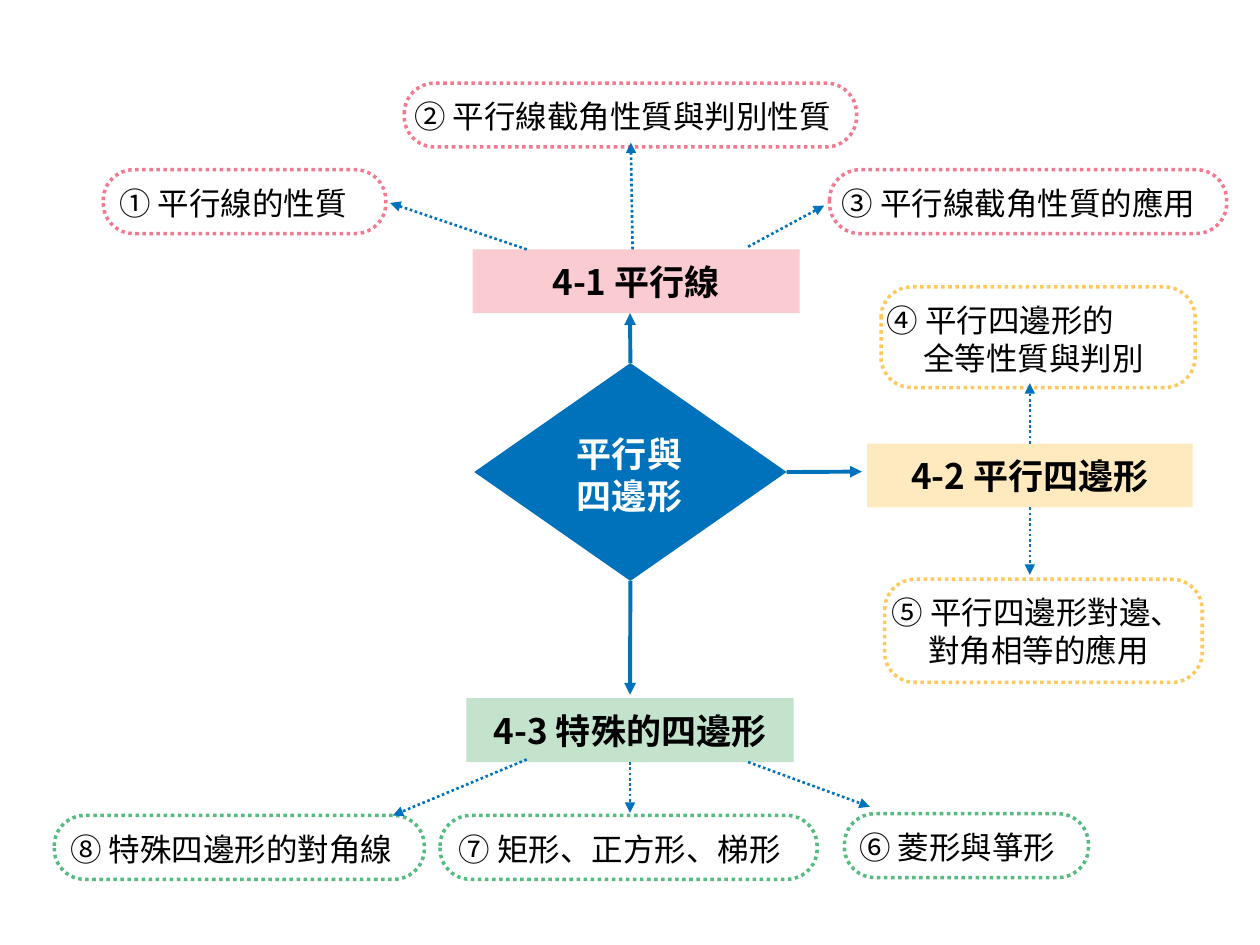
import pptx
import pptx.util
import pptx.dml.color
import pptx.enum.dml
import pptx.enum.shapes
import pptx.enum.text
import pptx.oxml
import pptx.oxml.ns

Pt = pptx.util.Pt
KIND = pptx.enum.shapes.MSO_SHAPE
ALIGN = pptx.enum.text.PP_ALIGN
CJK = "Noto Sans CJK SC"
BLUE, PINK, GOLD, GREEN = "0072BC", "F2798F", "FEC95B", "56BB80"
TOP, LEFT, BOTTOM, RIGHT = range(4)


def color(code):
    return pptx.dml.color.RGBColor.from_string(code)


def add_tag(node, name, **attrs):
    tag = pptx.oxml.parse_xml(f"<a:{name} {pptx.oxml.ns.nsdecls('a')}/>")
    for key, value in attrs.items():
        tag.set(key, value)
    node.append(tag)


def set_font(font, size, name=CJK, code="000000", bold=False):
    font.size, font.name, font.bold = Pt(size), name, bold
    font.color.rgb = color(code)
    add_tag(font._element, "ea", typeface=CJK)


def set_line(line, code, width, dotted):
    line.color.rgb = color(code)
    line.width = Pt(width)
    if dotted:
        line.dash_style = pptx.enum.dml.MSO_LINE.ROUND_DOT


def add_block(slide, kind, box, fill=None):
    shape = slide.shapes.add_shape(kind, *map(Pt, box))
    shape.shadow.inherit = False
    shape.line.fill.background()
    if fill:
        shape.fill.solid()
        shape.fill.fore_color.rgb = color(fill)
    else:
        shape.fill.background()
    return shape


def add_text(slide, box):
    frame = slide.shapes.add_textbox(*map(Pt, box)).text_frame
    frame.word_wrap = True
    frame.auto_size = pptx.enum.text.MSO_AUTO_SIZE.SHAPE_TO_FIT_TEXT
    return frame


def add_core(slide, box, text):
    x, y, w, h = box
    shape = add_block(slide, KIND.DIAMOND, box, BLUE)
    frame = add_text(slide, (x + 30, y + 36, w - 61, 55.5))
    frame.text = text
    for para in frame.paragraphs:
        para.alignment = ALIGN.CENTER
        set_font(para.font, 20, code="FFFFFF", bold=True)
    return shape


def add_topic(slide, box, text, fill):
    shape = add_block(slide, KIND.RECTANGLE, box, fill)
    frame = shape.text_frame
    frame.vertical_anchor = pptx.enum.text.MSO_ANCHOR.MIDDLE
    para = frame.paragraphs[0]
    para.text = text
    para.alignment = ALIGN.CENTER
    set_font(para.font, 20, bold=True)
    return shape


def add_card(slide, box, mark, lines, code, shift, width):
    x, y, w, h = box
    shape = add_block(slide, KIND.ROUNDED_RECTANGLE, box)
    shape.adjustments[0] = 17.4 / h
    set_line(shape.line, code, 2, True)
    tall = h > 40
    frame = add_text(slide, (x + shift, y + 4.5, width, 51 if tall else 29))
    for index, line in enumerate(lines):
        para = frame.paragraphs[0] if index == 0 else frame.add_paragraph()
        if tall:
            props = para._p.get_or_add_pPr()
            props.set("marL", str(Pt(21)))
            props.set("indent", str(Pt(0 if index else -21)))
        if index == 0:
            run = para.add_run()
            run.text = mark + " "
            set_font(run.font, 18, "Calibri")
        run = para.add_run()
        run.text = line
        set_font(run.font, 18)


def add_arrow(slide, start, end, dotted=True, source=None, side=None):
    kind = pptx.enum.shapes.MSO_CONNECTOR.STRAIGHT
    arrow = slide.shapes.add_connector(kind, *map(Pt, start + end))
    if source is not None:
        arrow.begin_connect(source, side)
    set_line(arrow.line, BLUE, 1.5 if dotted else 2.25, dotted)
    add_tag(arrow.line._get_or_add_ln(), "tailEnd", type="triangle")
    add_tag(arrow._element.spPr, "effectLst")


def main():
    deck = pptx.Presentation()
    deck.slide_width, deck.slide_height = Pt(720), Pt(540)
    slide = deck.slides.add_slide(deck.slide_layouts[6])

    core = add_core(slide, (271, 207.5, 178.5, 124.5), "平行與\n四邊形")
    quad = add_topic(slide, (495.5, 253.5, 186, 36.5), "4-2 平行四邊形", "FFEABF")
    special = add_topic(slide, (266.5, 399, 187, 36.5), "4-3 特殊的四邊形", "C3E3CC")
    add_topic(slide, (270, 142.5, 187, 36.5), "4-1 平行線", "FACCD2")

    cards = [
        ((59, 97, 161.5, 36.5), ["平行線的性質"], PINK, 2, 162),
        ((231, 47.5, 258.5, 36.5), ["平行線截角性質與判別性質"], PINK, -1.5, 262),
        ((474, 97, 227, 36.5), ["平行線截角性質的應用"], PINK, 0, 227),
        ((503.5, 164, 179.5, 57.5), ["平行四邊形的", "全等性質與判別"], GOLD, -4, 181.5),
        ((505.5, 331, 181.5, 59), ["平行四邊形對邊、對角相等的應用"], GOLD, -3, 193.5),
        ((482.5, 465, 139.5, 36.5), ["菱形與箏形"], GREEN, 1.5, 144),
        ((251.5, 466, 215.5, 36.5), ["矩形、正方形、梯形"], GREEN, 3.5, 219),
        ((31, 466, 211.5, 36.5), ["特殊四邊形的對角線"], GREEN, 2, 218),
    ]
    for mark, (box, lines, code, shift, width) in zip("①②③④⑤⑥⑦⑧", cards):
        add_card(slide, box, mark, lines, code, shift, width)

    add_arrow(slide, (360, 207.5), (360, 179), False, core, TOP)
    add_arrow(slide, (449.5, 269.5), (492.5, 269.5), False, core, RIGHT)
    add_arrow(slide, (360, 332), (360, 397), False, core, BOTTOM)
    add_arrow(slide, (360, 435.5), (360, 464.5), True, special, BOTTOM)
    add_arrow(slide, (588.5, 253.5), (588.5, 219), True, quad, TOP)
    add_arrow(slide, (588.5, 290), (588.5, 328.5), True, quad, BOTTOM)
    for start, end in [
        ((301, 142.5), (223, 116)),
        ((361.5, 142.5), (360.5, 81.5)),
        ((427.5, 141), (471, 117.5)),
        ((301, 434), (224.5, 466)),
        ((427.5, 435.5), (497, 461)),
    ]:
        add_arrow(slide, start, end)

    deck.save("out.pptx")


if __name__ == "__main__":
    main()
